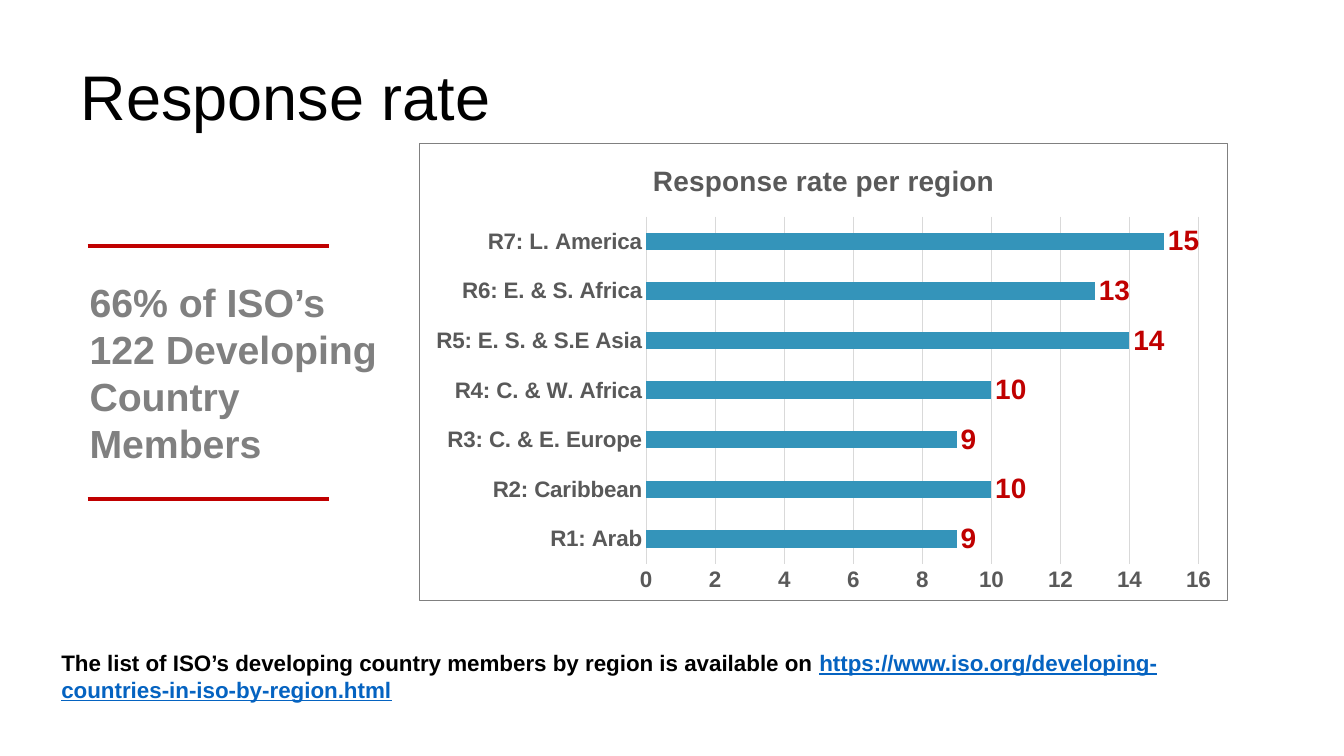
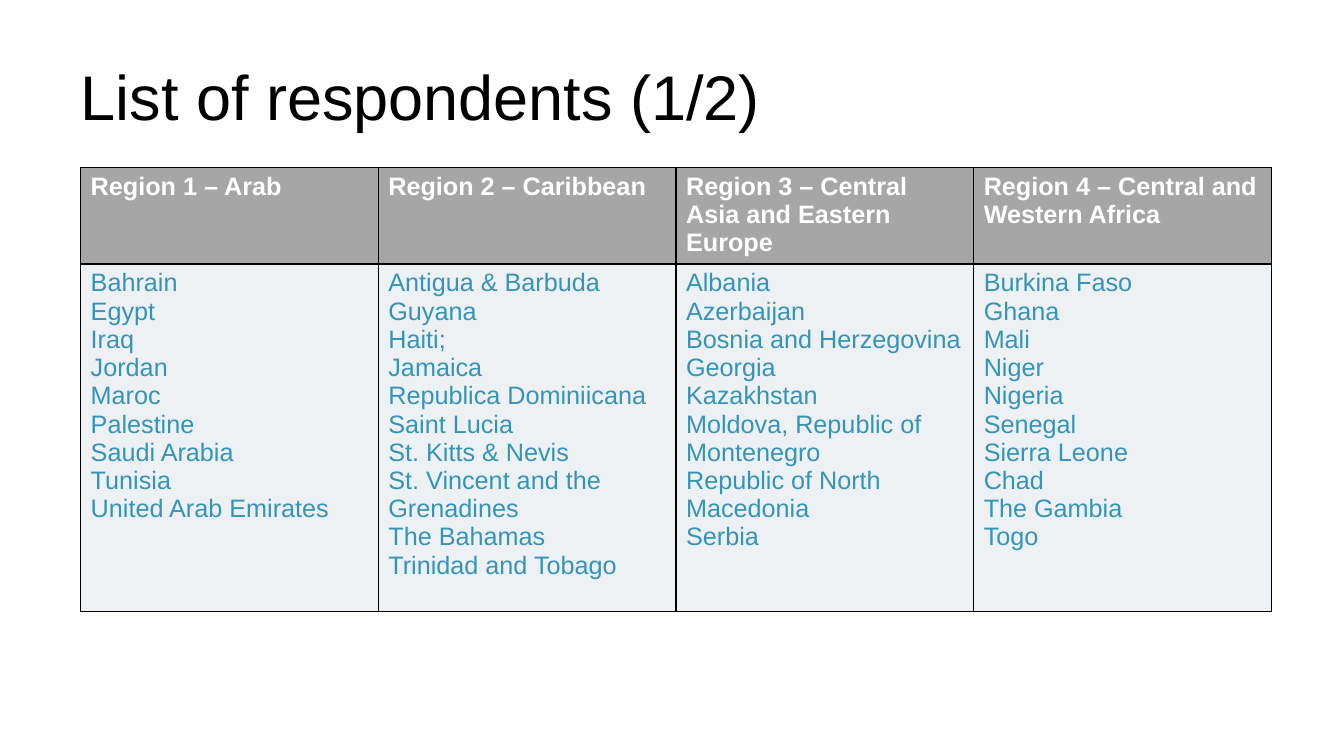
from lxml import etree
from pptx import Presentation
from pptx.chart.data import CategoryChartData
from pptx.dml.color import RGBColor
from pptx.enum.chart import XL_CHART_TYPE, XL_LABEL_POSITION, XL_TICK_MARK
from pptx.enum.shapes import MSO_CONNECTOR
from pptx.enum.text import MSO_ANCHOR, PP_ALIGN
from pptx.oxml import parse_xml
from pptx.oxml.ns import nsdecls, qn
from pptx.util import Inches, Pt

FONT = "Arial"
BLACK, WHITE, RED, TEAL = "000000", "FFFFFF", "C00000", "3494BA"
GREY, TEXT_GREY, GRID_GREY = "808080", "595959", "D9D9D9"
LINK_BLUE, HEADER_GREY, BODY_BLUE = "0563C1", "A6A6A6", "ADB9CA"


def style(font, size, color, bold=False):
    font.name, font.size, font.bold = FONT, Pt(size), bold
    font.color.rgb = RGBColor.from_string(color)


def titled_slide(title):
    s = prs.slides.add_slide(prs.slide_layouts[5])
    sp = s.shapes.title
    sp.left, sp.top, sp.width, sp.height = Inches(0.8), Inches(0.6), Inches(11.73), Inches(0.78)
    tf = sp.text_frame
    tf.text = title
    tf.margin_left = tf.margin_right = 0
    tf.vertical_anchor = MSO_ANCHOR.MIDDLE
    p = tf.paragraphs[0]
    p.alignment = PP_ALIGN.LEFT
    p.line_spacing = 0.9
    style(p.runs[0].font, 45, BLACK)
    return s


prs = Presentation()
prs.slide_width, prs.slide_height = Inches(13.33), Inches(7.5)

# Slide 1: response rate
s = titled_slide("Response rate")

tf = s.shapes.add_textbox(Inches(0.79), Inches(2.77), Inches(3.06), Inches(1.85)).text_frame
tf.word_wrap = True
tf.vertical_anchor = MSO_ANCHOR.MIDDLE
tf.text = "66% of ISO’s 122 Developing Country Members"
style(tf.paragraphs[0].runs[0].font, 28, GREY, True)

for y in (2.44, 4.95):
    rule = s.shapes.add_connector(MSO_CONNECTOR.STRAIGHT,
                                  Inches(0.87), Inches(y), Inches(3.26), Inches(y))
    rule.line.color.rgb = RGBColor.from_string(RED)
    rule.line.width = Pt(3)
    etree.SubElement(rule._element.spPr, qn("a:effectLst"))

responses = {
    "R1: Arab": 9, "R2: Caribbean": 10, "R3: C. & E. Europe": 9, "R4: C. & W. Africa": 10,
    "R5: E. S. & S.E Asia": 14, "R6: E. & S. Africa": 13, "R7: L. America": 15,
}
data = CategoryChartData()
data.categories = list(responses)
data.add_series("Series 1", list(responses.values()))
chart = s.shapes.add_chart(XL_CHART_TYPE.BAR_CLUSTERED, Inches(4.16), Inches(1.42),
                           Inches(8.02), Inches(4.54), data).chart
style(chart.font, 10, BLACK)
chart.has_legend = False
chart.has_title = True
tf = chart.chart_title.text_frame
tf.text = "Response rate per region"
style(tf.paragraphs[0].runs[0].font, 20, TEXT_GREY, True)

for axis in (chart.category_axis, chart.value_axis):
    axis.major_tick_mark = axis.minor_tick_mark = XL_TICK_MARK.NONE
    style(axis.tick_labels.font, 16, TEXT_GREY, True)
chart.value_axis.minimum_scale = 0
chart.value_axis.maximum_scale = 16
chart.value_axis.major_unit = 2
chart.value_axis.format.line.fill.background()
for line in (chart.category_axis.format.line, chart.value_axis.major_gridlines.format.line):
    line.color.rgb = RGBColor.from_string(GRID_GREY)
    line.width = Pt(0.75)

plot = chart.plots[0]
plot.gap_width = 182
plot.vary_by_categories = False
bars = plot.series[0]
bars.format.fill.solid()
bars.format.fill.fore_color.rgb = RGBColor.from_string(TEAL)
labels = bars.data_labels
labels.show_value = True
labels.position = XL_LABEL_POSITION.OUTSIDE_END
style(labels.font, 20, RED, True)

plot_area = chart._chartSpace.chart.plotArea
for layout in plot_area.findall(qn("c:layout")):
    plot_area.remove(layout)
plot_area.insert(0, parse_xml(
    f'<c:layout {nsdecls("c")}><c:manualLayout><c:layoutTarget val="inner"/>'
    '<c:xMode val="edge"/><c:yMode val="edge"/><c:x val="0.28"/><c:y val="0.16"/>'
    '<c:w val="0.684"/><c:h val="0.76"/></c:manualLayout></c:layout>'))
chart._chartSpace.chart.addnext(parse_xml(
    f'<c:spPr {nsdecls("c", "a")}><a:noFill/><a:ln w="{Pt(0.75)}"><a:solidFill>'
    f'<a:srgbClr val="{GREY}"/></a:solidFill></a:ln></c:spPr>'))

tf = s.shapes.add_textbox(Inches(0.51), Inches(6.39), Inches(11.76), Inches(0.64)).text_frame
tf.word_wrap = True
p = tf.paragraphs[0]
for text, color in (
    ("The list of ISO’s developing country members by region is available on ", BLACK),
    ("https://www.iso.org/developing-countries-in-iso-by-region.html", LINK_BLUE),
):
    r = p.add_run()
    r.text = text
    style(r.font, 16, color, True)
    r.font.underline = color == LINK_BLUE

# Slide 2: respondents by region
s = titled_slide("List of respondents (1/2)")
regions = {
    "Region 1 – Arab": [
        "Bahrain", "Egypt", "Iraq", "Jordan", "Maroc", "Palestine", "Saudi Arabia",
        "Tunisia", "United Arab Emirates"],
    "Region 2 – Caribbean": [
        "Antigua & Barbuda", "Guyana", "Haiti;", "Jamaica",
        "Republica Dominiicana Saint Lucia", "St. Kitts & Nevis",
        "St. Vincent and the Grenadines", "The Bahamas", "Trinidad and Tobago"],
    "Region 3 – Central Asia and Eastern Europe": [
        "Albania", "Azerbaijan", "Bosnia and Herzegovina", "Georgia", "Kazakhstan",
        "Moldova, Republic of", "Montenegro", "Republic of North Macedonia", "Serbia"],
    "Region 4 – Central and Western Africa": [
        "Burkina Faso", "Ghana", "Mali", "Niger", "Nigeria", "Senegal", "Sierra Leone",
        "Chad", "The Gambia", "Togo"],
}
table = s.shapes.add_table(2, len(regions), Inches(0.8), Inches(1.66),
                           Inches(11.81), Inches(4.41)).table
table.rows[0].height, table.rows[1].height = Inches(0.96), Inches(3.45)
for col, (region, countries) in enumerate(regions.items()):
    for row, (lines, fill, color) in enumerate((
        ([region], HEADER_GREY, WHITE),
        (countries, BODY_BLUE, TEAL),
    )):
        cell = table.cell(row, col)
        cell.text_frame.text = "\n".join(lines)
        for p in cell.text_frame.paragraphs:
            style(p.runs[0].font, 18, color, row == 0)
        cell.fill.solid()
        cell.fill.fore_color.rgb = RGBColor.from_string(fill)
        tc_pr = cell._tc.get_or_add_tcPr()
        if row == 1:
            etree.SubElement(tc_pr.find(".//" + qn("a:srgbClr")), qn("a:alpha"), val="20000")
        for i, side in enumerate(("lnL", "lnR", "lnT", "lnB")):
            tc_pr.insert(i, parse_xml(
                f'<a:{side} {nsdecls("a")} w="{Pt(1)}"><a:solidFill>'
                f'<a:srgbClr val="{BLACK}"/></a:solidFill></a:{side}>'))

prs.save("out.pptx")
